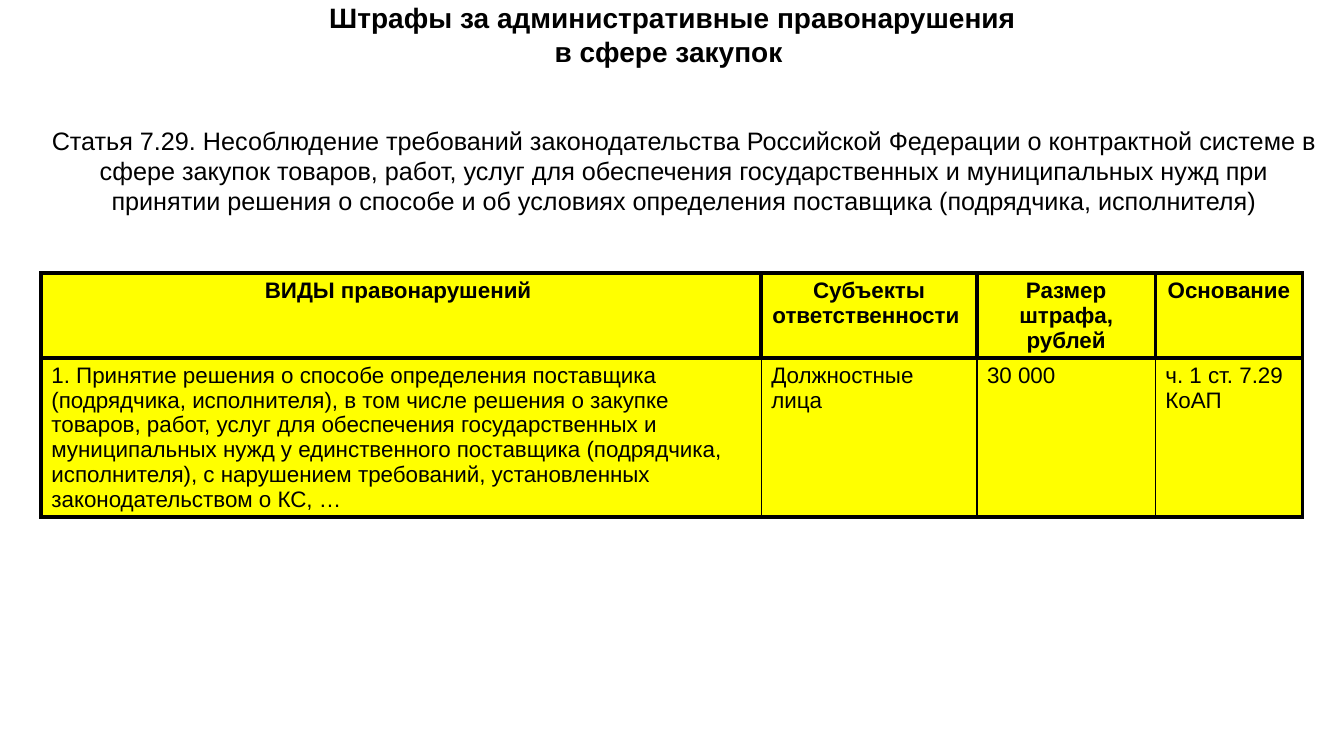
from lxml.etree import SubElement
from pptx import Presentation
from pptx.dml.color import RGBColor
from pptx.enum.text import MSO_ANCHOR, MSO_AUTO_SIZE, PP_ALIGN
from pptx.oxml.ns import qn
from pptx.util import Inches, Pt

BLACK = RGBColor(0x00, 0x00, 0x00)
YELLOW = RGBColor(0xFF, 0xFF, 0x00)
FONT = "Arial"
WIDTH, HEIGHT = 13.33, 7.5
LEFT = 0.41
THICK, THIN = 3, 1

TITLE = "Штрафы за административные правонарушения\vв сфере закупок "
ARTICLE = (
    "Статья 7.29. Несоблюдение требований законодательства Российской Федерации "
    "о контрактной системе в сфере закупок товаров, работ, услуг для обеспечения "
    "государственных и муниципальных нужд при принятии решения о способе и об "
    "условиях определения поставщика (подрядчика, исполнителя)"
)
COLUMNS = [7.14, 2.14, 1.77, 1.46]
ROWS = [0.59, 0.75]
FINES = [
    ["ВИДЫ правонарушений ", "Субъекты ответственности ",
     "Размер штрафа, рублей", "Основание "],
    ["1. Принятие решения о способе определения поставщика (подрядчика, "
     "исполнителя), в том числе решения о закупке товаров, работ, услуг для "
     "обеспечения государственных и муниципальных нужд у единственного "
     "поставщика (подрядчика, исполнителя), с нарушением требований, "
     "установленных законодательством о КС, …",
     "Должностные лица", "30 000", "ч. 1 ст. 7.29 КоАП"],
]


def write(tf, text, size=16, bold=False, align=PP_ALIGN.LEFT):
    """Fill a text frame with one formatted paragraph."""
    tf.word_wrap = True
    p = tf.paragraphs[0]
    p.text = text
    p.alignment = align
    for r in p.runs:
        r.font.name, r.font.size, r.font.bold = FONT, Pt(size), bold
        r.font.color.rgb = BLACK


def set_borders(cell, **widths):
    """Draw the cell borders; widths in points are keyed L, R, T, B."""
    tc_pr = cell._tc.get_or_add_tcPr()
    for side, width in widths.items():
        ln = SubElement(tc_pr, qn(f"a:ln{side}"), w=str(Pt(width)))
        fill = SubElement(ln, qn("a:solidFill"))
        SubElement(fill, qn("a:srgbClr"), val=str(BLACK))


def add_title(slide):
    sp = slide.shapes.title
    sp.left, sp.top = Inches(2.17), 0
    sp.width, sp.height = Inches(9), Inches(0.68)
    tf = sp.text_frame
    tf.auto_size = MSO_AUTO_SIZE.NONE
    tf.vertical_anchor = MSO_ANCHOR.MIDDLE
    write(tf, TITLE, size=20, bold=True, align=PP_ALIGN.CENTER)


def add_article(slide):
    sp = slide.shapes.add_textbox(
        Inches(LEFT), Inches(1.19), Inches(12.75), Inches(1.01))
    write(sp.text_frame, ARTICLE, size=18, align=PP_ALIGN.CENTER)
    sp.text_frame.auto_size = MSO_AUTO_SIZE.SHAPE_TO_FIT_TEXT


def add_fines_table(slide):
    table = slide.shapes.add_table(
        len(ROWS), len(COLUMNS), Inches(LEFT), Inches(2.71),
        Inches(sum(COLUMNS)), Inches(sum(ROWS))).table
    for column, width in zip(table.columns, COLUMNS):
        column.width = Inches(width)
    last = len(COLUMNS) - 1
    for i, texts in enumerate(FINES):
        header = i == 0
        table.rows[i].height = Inches(ROWS[i])
        inner = THICK if header else THIN
        for j, text in enumerate(texts):
            cell = table.cell(i, j)
            write(cell.text_frame, text, bold=header,
                  align=PP_ALIGN.CENTER if header else PP_ALIGN.LEFT)
            set_borders(cell, L=THICK if j == 0 else inner,
                        R=THICK if j == last else inner, T=THICK, B=THICK)
            cell.fill.solid()
            cell.fill.fore_color.rgb = YELLOW


def main():
    prs = Presentation()
    prs.slide_width, prs.slide_height = Inches(WIDTH), Inches(HEIGHT)
    slide = prs.slides.add_slide(prs.slide_layouts.get_by_name("Title Only"))

    # Heading, table of fines and the article it rests on
    add_title(slide)
    add_fines_table(slide)
    add_article(slide)

    # Footer placeholders stay out of the slide
    for sp in list(slide.placeholders):
        if not sp.text_frame.text:
            sp.element.getparent().remove(sp.element)
    prs.save("out.pptx")


if __name__ == "__main__":
    main()
